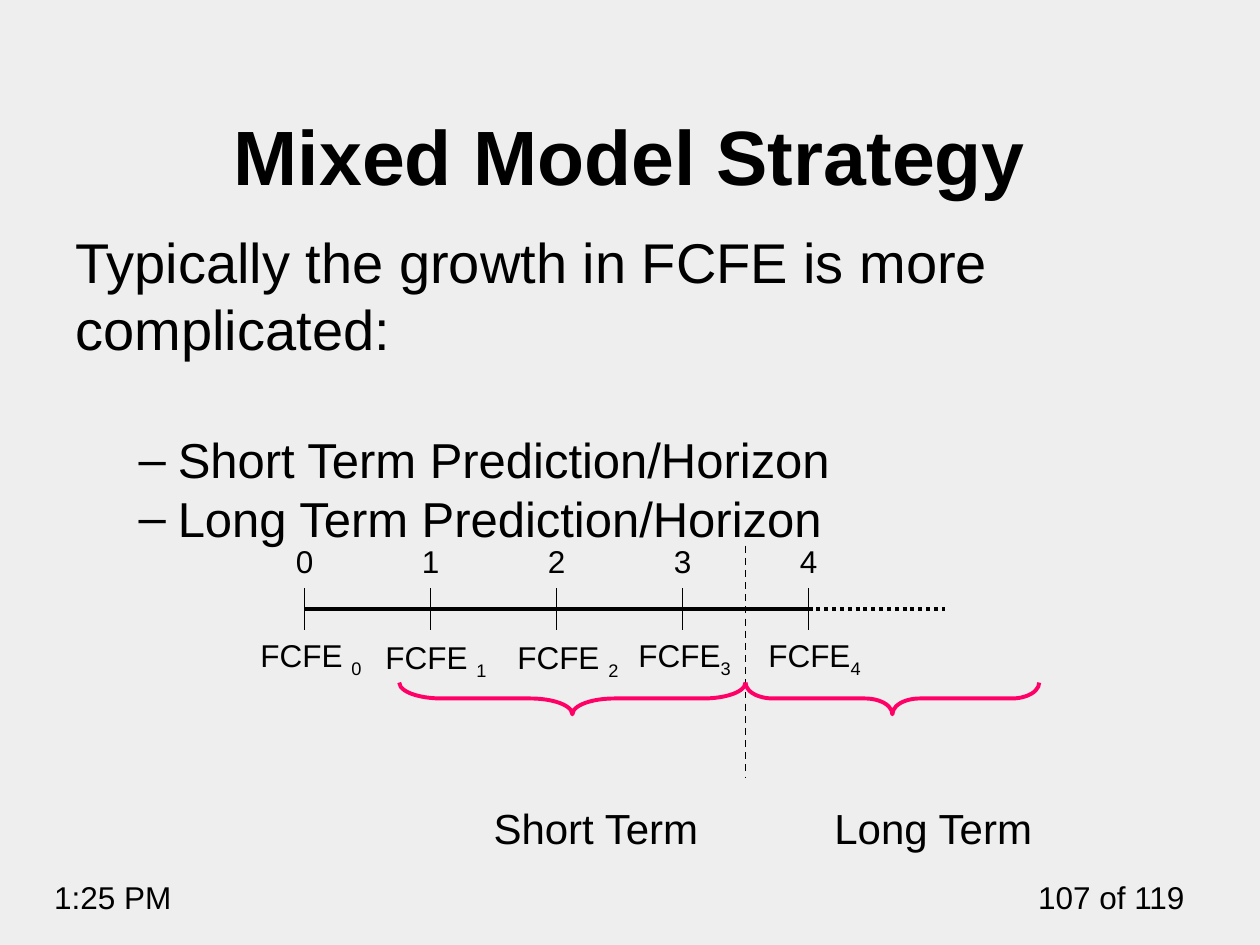
from dataclasses import dataclass

from lxml.etree import SubElement
from pptx import Presentation
from pptx.dml.color import RGBColor
from pptx.enum.dml import MSO_LINE
from pptx.enum.shapes import MSO_CONNECTOR, MSO_SHAPE
from pptx.enum.text import MSO_ANCHOR, MSO_AUTO_SIZE, PP_ALIGN
from pptx.oxml.ns import qn
from pptx.util import Cm, Pt


@dataclass(frozen=True)
class Theme:
    font: str = "Arial"
    background: RGBColor = RGBColor(0xEE, 0xEE, 0xEE)
    ink: RGBColor = RGBColor(0, 0, 0)
    brace: RGBColor = RGBColor(0xFF, 0x00, 0x66)
    title: int = 44
    lead: int = 32
    item: int = 28
    term: int = 24
    label: int = 18
    thick: float = 2.25
    thin: float = 1


THEME = Theme()


def place(sp, x, y, w, h):
    sp.left, sp.top, sp.width, sp.height = Cm(x), Cm(y), Cm(w), Cm(h)


def add_run(p, text, size, bold=False, subscript=False):
    r = p.add_run()
    r.text = text
    r.font.name = THEME.font
    r.font.size = Pt(size)
    r.font.bold = bold
    r.font.color.rgb = THEME.ink
    if subscript:
        r.font._element.set("baseline", "-25000")


def add_label(s, x, y, w, text, size=THEME.label, align=PP_ALIGN.LEFT, sub=""):
    sp = s.shapes.add_textbox(Cm(x), Cm(y), Cm(w), Cm(1.02))
    tf = sp.text_frame
    tf.word_wrap = True
    p = tf.paragraphs[0]
    p.alignment = align
    add_run(p, text, size)
    if sub:
        add_run(p, sub, size, subscript=True)


def add_line(s, x1, y1, x2, y2, width, dash=None):
    sp = s.shapes.add_connector(MSO_CONNECTOR.STRAIGHT, Cm(x1), Cm(y1), Cm(x2), Cm(y2))
    sp.line.color.rgb = THEME.ink
    sp.line.width = Pt(width)
    if dash:
        sp.line.dash_style = dash
    SubElement(sp._element.spPr, qn("a:effectLst"))


def add_brace(s, x, y, w, h, curve):
    """Brace pointing down that fills the box: a left brace turned by 270 degrees."""
    sp = s.shapes.add_shape(MSO_SHAPE.LEFT_BRACE, Cm(x + (w - h) / 2),
                            Cm(y + (h - w) / 2), Cm(h), Cm(w))
    sp.rotation = 270
    sp.adjustments[0] = curve
    sp.adjustments[1] = 0.5
    sp.shadow.inherit = False
    sp.fill.background()
    sp.line.color.rgb = THEME.brace
    sp.line.width = Pt(THEME.thick)


def set_bullet(p, char, margin, indent):
    pPr = p._p.get_or_add_pPr()
    pPr.set("marL", str(Cm(margin)))
    pPr.set("indent", str(Cm(indent)))
    if char:
        SubElement(pPr, qn("a:buChar")).set("char", char)
    else:
        SubElement(pPr, qn("a:buNone"))


def fill_title(s, x, y, w, h):
    sp = s.shapes.title
    place(sp, x, y, w, h)
    tf = sp.text_frame
    tf.auto_size = MSO_AUTO_SIZE.NONE
    tf.vertical_anchor = MSO_ANCHOR.BOTTOM
    p = tf.paragraphs[0]
    p.alignment = PP_ALIGN.CENTER
    add_run(p, "Mixed Model Strategy", THEME.title, bold=True)


def fill_body(s, x, y, w, h):
    sp = s.placeholders[1]
    place(sp, x, y, w, h)
    tf = sp.text_frame
    tf.auto_size = MSO_AUTO_SIZE.NONE
    paragraphs = [
        ("Typically the growth in FCFE is more complicated:", 0, 0),
        ("Short Term Prediction/Horizon", 1, 39),
        ("Long Term Prediction/Horizon", 1, 0),
    ]
    for i, (text, level, before) in enumerate(paragraphs):
        p = tf.add_paragraph() if i else tf.paragraphs[0]
        p.level = level
        p.line_spacing = 1.0
        p.space_before = Pt(before)
        if level:
            set_bullet(p, "–", 2.06, -0.79)
        else:
            set_bullet(p, None, 0, 0)
        add_run(p, text, THEME.item if level else THEME.lead)


def draw_timeline(s, x, y):
    """Timeline whose period 0 stands at x and whose numbers start at y."""
    step, axis, tick = 2.54, y + 1.48, 0.42
    # Text, left offset from the tick and top of each cash flow label
    flows = [("FCFE ", -1.14, 1.9), ("FCFE ", -1.16, 1.94), ("FCFE ", -1.04, 1.94),
             ("FCFE", -1.14, 1.9), ("FCFE", -1.06, 1.9)]
    end = x + step * (len(flows) - 1)
    add_line(s, x, axis, end, axis, THEME.thick)
    add_line(s, end, axis, x + 12.91, axis, THEME.thick, MSO_LINE.ROUND_DOT)
    for period, (text, dx, dy) in enumerate(flows):
        cx = x + step * period
        add_line(s, cx, axis - tick, cx, axis + tick, THEME.thin)
        add_label(s, cx - 0.43, y, 0.86, str(period), align=PP_ALIGN.CENTER)
        add_label(s, cx + dx, y + dy, 2.9, text, sub=str(period))

    split = 8.89
    add_line(s, x + split, y + 0.2, x + split, y + 4.87, THEME.thin, MSO_LINE.DASH)
    terms = [("Short Term", 1.91, split, 1.32, 3.56), ("Long Term", split, 14.81, 0.86, 10.43)]
    for text, start, stop, curve, label_x in terms:
        add_brace(s, x + start, y + 2.96, stop - start, 0.64, curve)
        add_label(s, x + label_x, y + 5.25, 5, text, THEME.term)


def draw_footer(s, x, y, w):
    box = 4.02
    add_label(s, x, y, box, "1:25 PM")
    add_label(s, x + w - box, y, box, "107 of 119", align=PP_ALIGN.RIGHT)


def main():
    prs = Presentation()
    prs.slide_width, prs.slide_height = Cm(25.4), Cm(19.05)
    s = prs.slides.add_slide(prs.slide_layouts[1])
    s.background.fill.solid()
    s.background.fill.fore_color.rgb = THEME.background
    fill_title(s, 1.27, 0.99, 22.86, 3.18)
    fill_body(s, 1.27, 4.45, 22.86, 12.57)
    draw_timeline(s, 6.14, 10.8)
    draw_footer(s, 0.84, 17.58, 23.29)
    prs.save("out.pptx")


if __name__ == "__main__":
    main()
